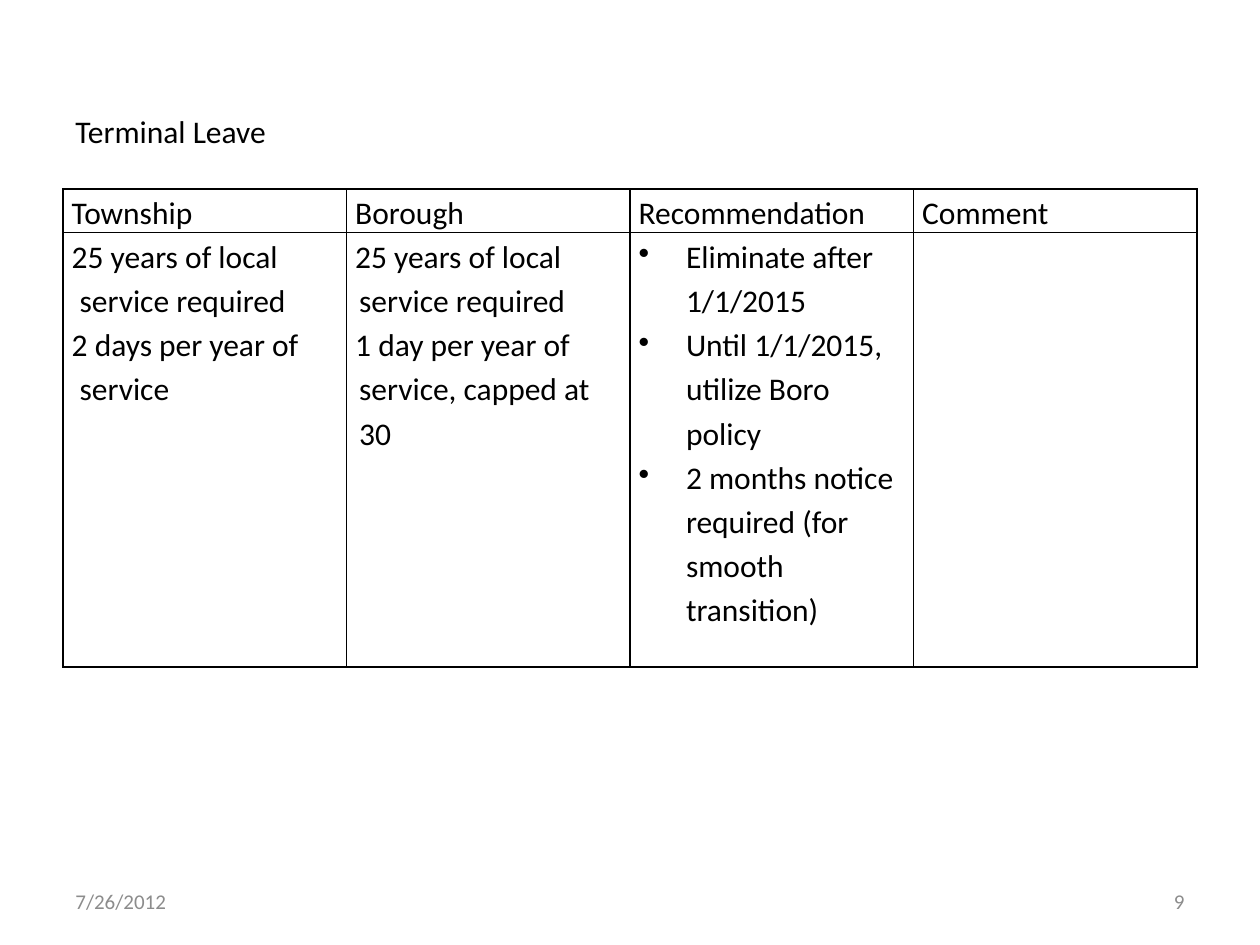
from lxml.etree import SubElement
from pptx import Presentation
from pptx.dml.color import RGBColor
from pptx.enum.text import MSO_ANCHOR as Anchor, MSO_AUTO_SIZE as AutoSize, PP_ALIGN as Align
from pptx.oxml.ns import qn
from pptx.util import Pt

THEME = {
    "font": "Calibri",
    "ink": RGBColor(0, 0, 0),
    "muted": RGBColor(0x8C, 0x8C, 0x8C),
    "body": Pt(18),
    "footer": Pt(12),
    "border": Pt(1),
}
HEADERS = ["Township", "Borough", "Recommendation", "Comment"]
DETAILS = [
    ["25 years of local service required", "2 days per year of service"],
    ["25 years of local service required", "1 day per year of service, capped at 30"],
    [
        "Eliminate after 1/1/2015",
        "Until 1/1/2015, utilize Boro policy",
        "2 months notice required (for smooth transition)",
    ],
    [""],
]
INDENTS = [(4.5, -4.5), (2.25, -6.75), (27, -27), (0, 0)]
BULLET_COLUMN = HEADERS.index("Recommendation")


def write(paragraph, text, size, color):
    paragraph.text = text
    font = paragraph.font
    font.name, font.size, font.color.rgb = THEME["font"], size, color


def style_cell(cell):
    cell.margin_left = cell.margin_right = Pt(5)
    cell.margin_top = cell.margin_bottom = 0
    properties = cell._tc.get_or_add_tcPr()
    for side in ("lnL", "lnR", "lnT", "lnB"):
        line = SubElement(properties, qn(f"a:{side}"), w=str(THEME["border"]))
        fill = SubElement(line, qn("a:solidFill"))
        SubElement(fill, qn("a:srgbClr"), val=str(THEME["ink"]))
    cell.fill.background()


presentation = Presentation()
presentation.slide_width, presentation.slide_height = Pt(720), Pt(540)
slide = presentation.slides.add_slide(presentation.slide_layouts[6])

for text, left, align in [("7/26/2012", 36, Align.LEFT), ("9", 516, Align.RIGHT)]:
    footer = slide.shapes.add_textbox(Pt(left), Pt(500.5), Pt(168), Pt(28.75)).text_frame
    footer.word_wrap = True
    footer.vertical_anchor = Anchor.MIDDLE
    footer.paragraphs[0].alignment = align
    write(footer.paragraphs[0], text, THEME["footer"], THEME["muted"])

title = slide.shapes.add_textbox(Pt(36), Pt(60.5), Pt(124.5), Pt(29)).text_frame
title.word_wrap = False
title.auto_size = AutoSize.SHAPE_TO_FIT_TEXT
write(title.paragraphs[0], "Terminal Leave", THEME["body"], THEME["ink"])

table = slide.shapes.add_table(2, len(HEADERS), Pt(36), Pt(108), Pt(648), Pt(273)).table
table.first_row = table.horz_banding = False
table.rows[0].height, table.rows[1].height = Pt(24.75), Pt(248.25)

for column, (header, details) in enumerate(zip(HEADERS, DETAILS)):
    for row, lines in enumerate([[header], details]):
        cell = table.cell(row, column)
        style_cell(cell)
        for index, text in enumerate(lines):
            frame = cell.text_frame
            paragraph = frame.add_paragraph() if index else frame.paragraphs[0]
            write(paragraph, text, THEME["body"], THEME["ink"])
            paragraph.line_spacing = 1.15
            if row == 0:
                continue
            margin, indent = INDENTS[column]
            properties = paragraph._p.get_or_add_pPr()
            properties.set("marL", str(Pt(margin)))
            properties.set("indent", str(Pt(indent)))
            if column == BULLET_COLUMN:
                bullet = properties.makeelement(qn("a:buChar"), {"char": "•"})
                properties.find(qn("a:defRPr")).addprevious(bullet)

presentation.save("out.pptx")
